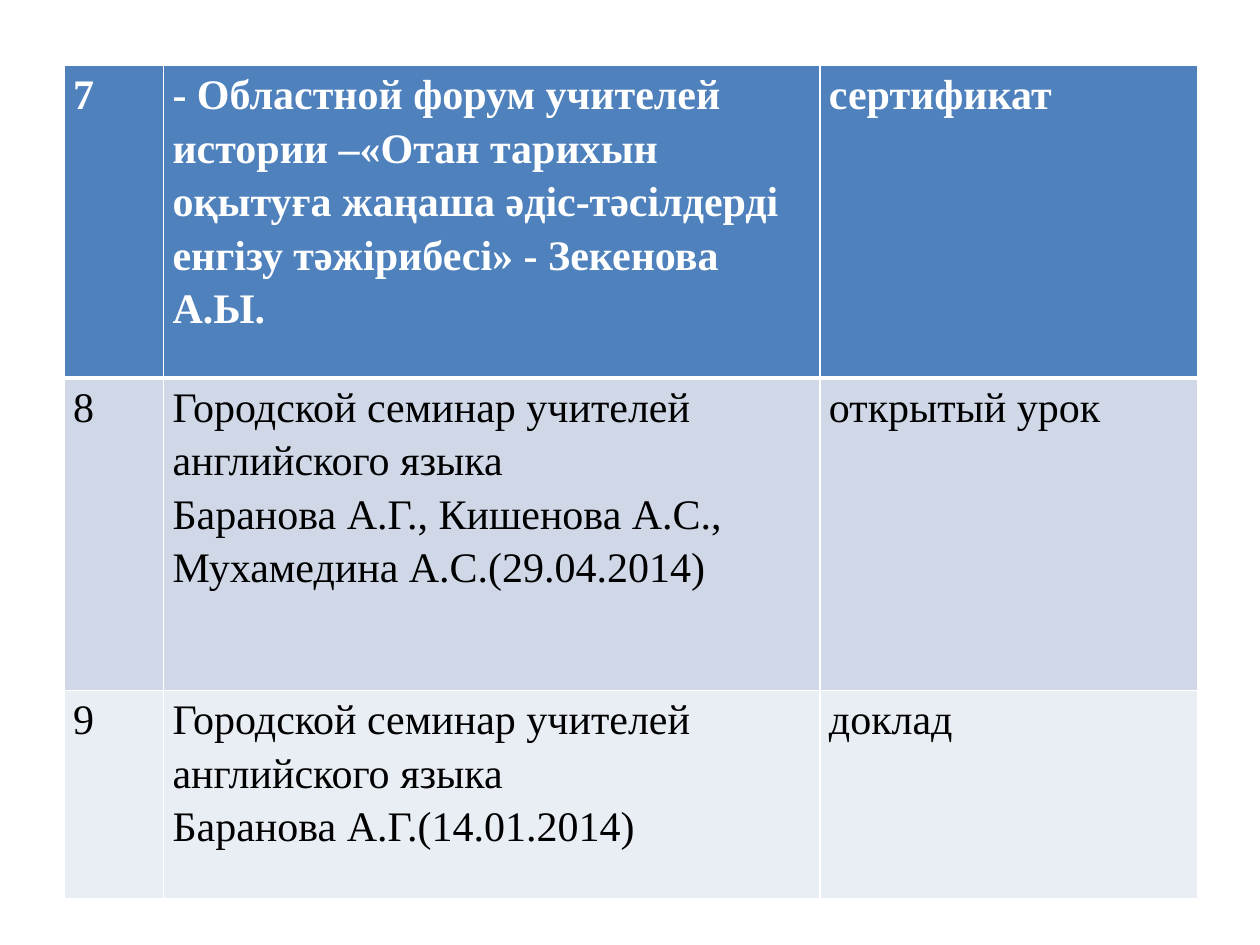
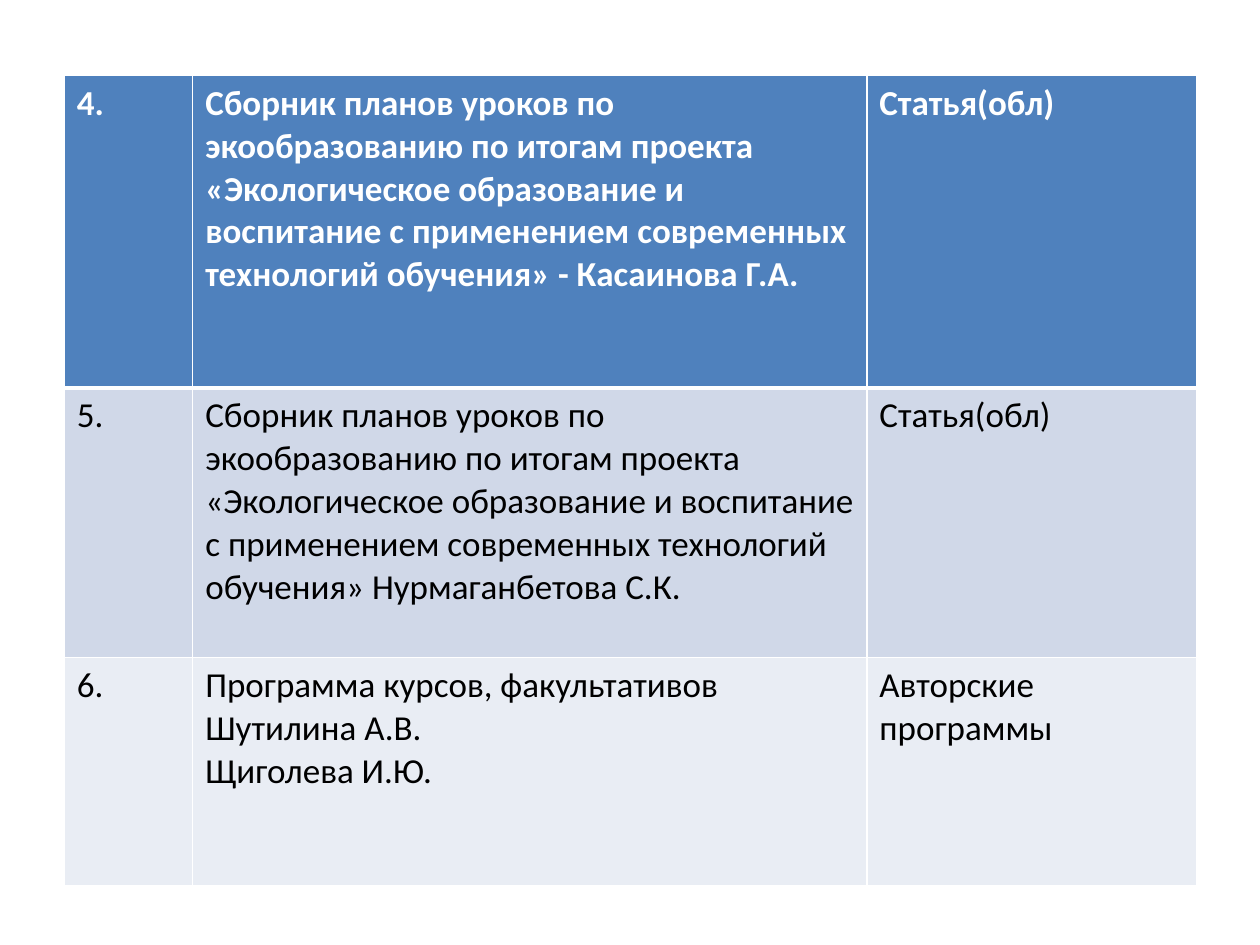
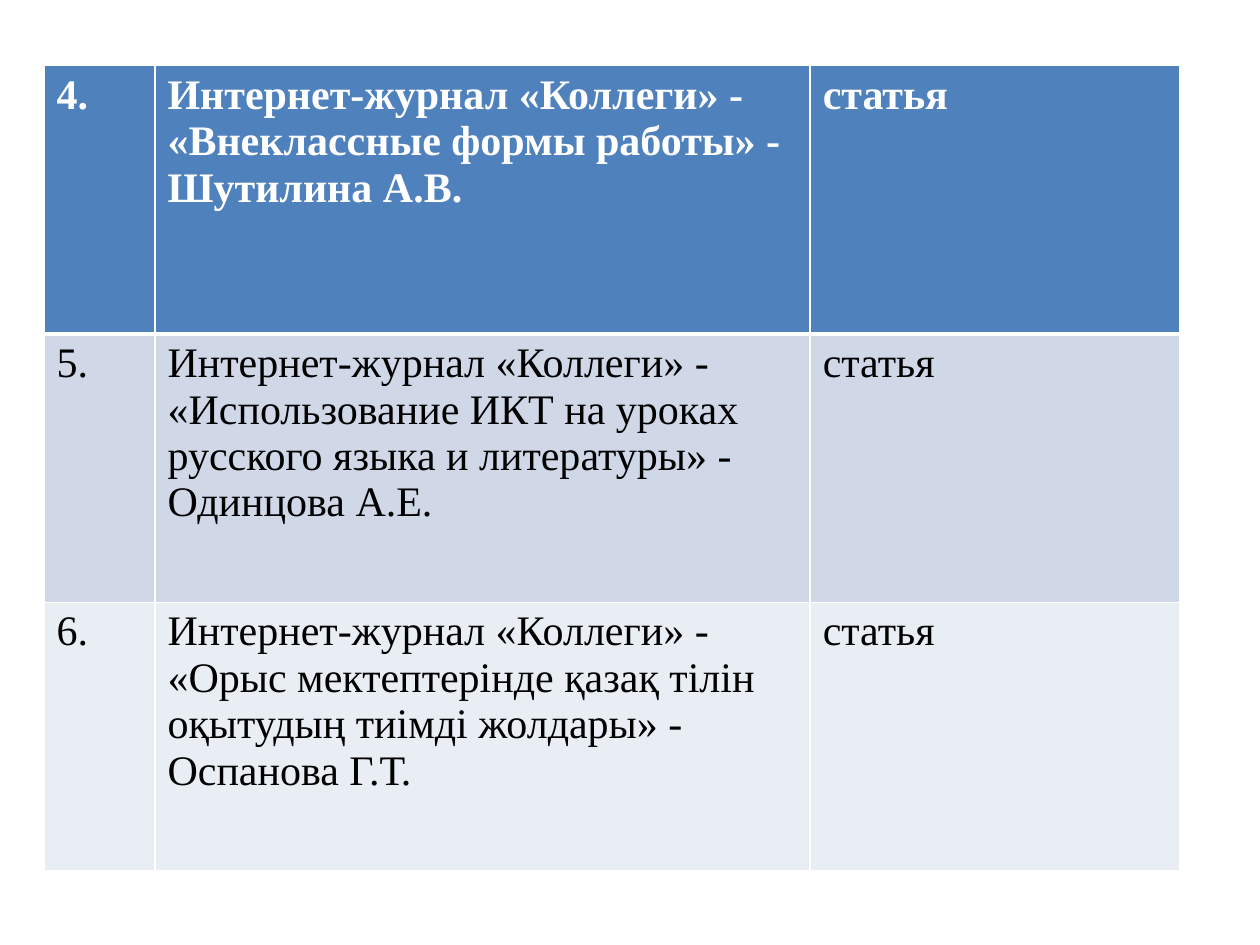
from lxml.etree import SubElement
from pptx import Presentation
from pptx.dml.color import RGBColor
from pptx.oxml.ns import qn
from pptx.util import Inches, Pt

BLUE = RGBColor(0x4F, 0x81, 0xBD)
BAND = RGBColor(0xD0, 0xD8, 0xE8)
PALE = RGBColor(0xE9, 0xED, 0xF4)
WHITE = RGBColor(0xFF, 0xFF, 0xFF)
BLACK = RGBColor(0x00, 0x00, 0x00)
ROW_FILLS = [BLUE, BAND, PALE]
THIN, THICK = Pt(1), Pt(3)

ECO = ("Сборник планов уроков по экообразованию по итогам проекта "
       "«Экологическое образование и воспитание с применением "
       "современных технологий обучения» ")
SEMINAR = "Городской семинар учителей английского языка"
JOURNAL = "Интернет-журнал «Коллеги» - "

TABLES = [
    dict(left=0.51, top=0.52, cols=[0.79, 5.21, 3], heights=[2.48, 2.48, 1.65],
         font="Times New Roman", size=24, spacing=1.15, side=0.07, edge=0,
         rows=[
             ("7", "- Областной форум учителей истории –«Отан тарихын оқытуға жаңаша "
                   "әдіс-тәсілдерді енгізу тәжірибесі» - Зекенова А.Ы.", "сертификат"),
             ("8", SEMINAR + "\nБаранова А.Г., Кишенова А.С., Мухамедина А.С.(29.04.2014)",
              "открытый урок"),
             ("9", SEMINAR + "\nБаранова А.Г.(14.01.2014)", "доклад"),
         ]),
    dict(left=0.51, top=0.6, cols=[1.02, 5.35, 2.62], heights=[2.48, 2.14, 1.81],
         font="Calibri", size=20, spacing=1.0, side=0.1, edge=0.05,
         rows=[
             ("4.", ECO + "- Касаинова Г.А.", "Статья(обл)"),
             ("5.", ECO + "Нурмаганбетова С.К.", "Статья(обл)"),
             ("6.", "Программа курсов, факультативов\nШутилина А.В.\nЩиголева И.Ю.",
              "Авторские программы"),
         ]),
    dict(left=0.35, top=0.52, cols=[0.88, 5.2, 2.93], heights=[2.13] * 3,
         font="Times New Roman", size=24, spacing=1.0, side=0.1, edge=0.05,
         rows=[
             ("4.", JOURNAL + "«Внеклассные формы работы» - Шутилина А.В.", "статья"),
             ("5.", JOURNAL + "«Использование ИКТ на уроках русского языка и литературы» - "
                              "Одинцова А.Е.", "статья"),
             ("6.", JOURNAL + "«Орыс мектептерінде қазақ тілін оқытудың тиімді жолдары» - "
                              "Оспанова Г.Т.", "статья"),
         ]),
]


def set_borders(cell, row):
    widths = {"a:lnL": THIN, "a:lnR": THIN,
              "a:lnT": THICK if row == 1 else THIN,
              "a:lnB": THICK if row == 0 else THIN}
    tc_pr = cell._tc.get_or_add_tcPr()
    for tag, width in widths.items():
        ln = SubElement(tc_pr, qn(tag), w=str(width))
        SubElement(SubElement(ln, qn("a:solidFill")), qn("a:srgbClr"), val=str(WHITE))


def fill_cell(cell, text, row, spec_):
    set_borders(cell, row)
    cell.fill.solid()
    cell.fill.fore_color.rgb = ROW_FILLS[row]
    cell.margin_left = cell.margin_right = Inches(spec_["side"])
    cell.margin_top = cell.margin_bottom = Inches(spec_["edge"])
    cell.text = text
    for p in cell.text_frame.paragraphs:
        p.line_spacing = spec_["spacing"]
        p.font.name = spec_["font"]
        p.font.size = Pt(spec_["size"])
        p.font.bold = row == 0
        p.font.color.rgb = WHITE if row == 0 else BLACK


def add_report_table(s, report):
    cols, heights, rows = report["cols"], report["heights"], report["rows"]
    table = s.shapes.add_table(
        len(rows), len(cols), Inches(report["left"]), Inches(report["top"]),
        Inches(sum(cols)), Inches(sum(heights))).table
    for column, width in zip(table.columns, cols):
        column.width = Inches(width)
    for i, (height, texts) in enumerate(zip(heights, rows)):
        table.rows[i].height = Inches(height)
        for j, text in enumerate(texts):
            fill_cell(table.cell(i, j), text, i, report)


def main():
    prs = Presentation()
    prs.slide_width, prs.slide_height = Inches(10), Inches(7.5)
    for report in TABLES:
        add_report_table(prs.slides.add_slide(prs.slide_layouts[6]), report)
    prs.save("out.pptx")


if __name__ == "__main__":
    main()
